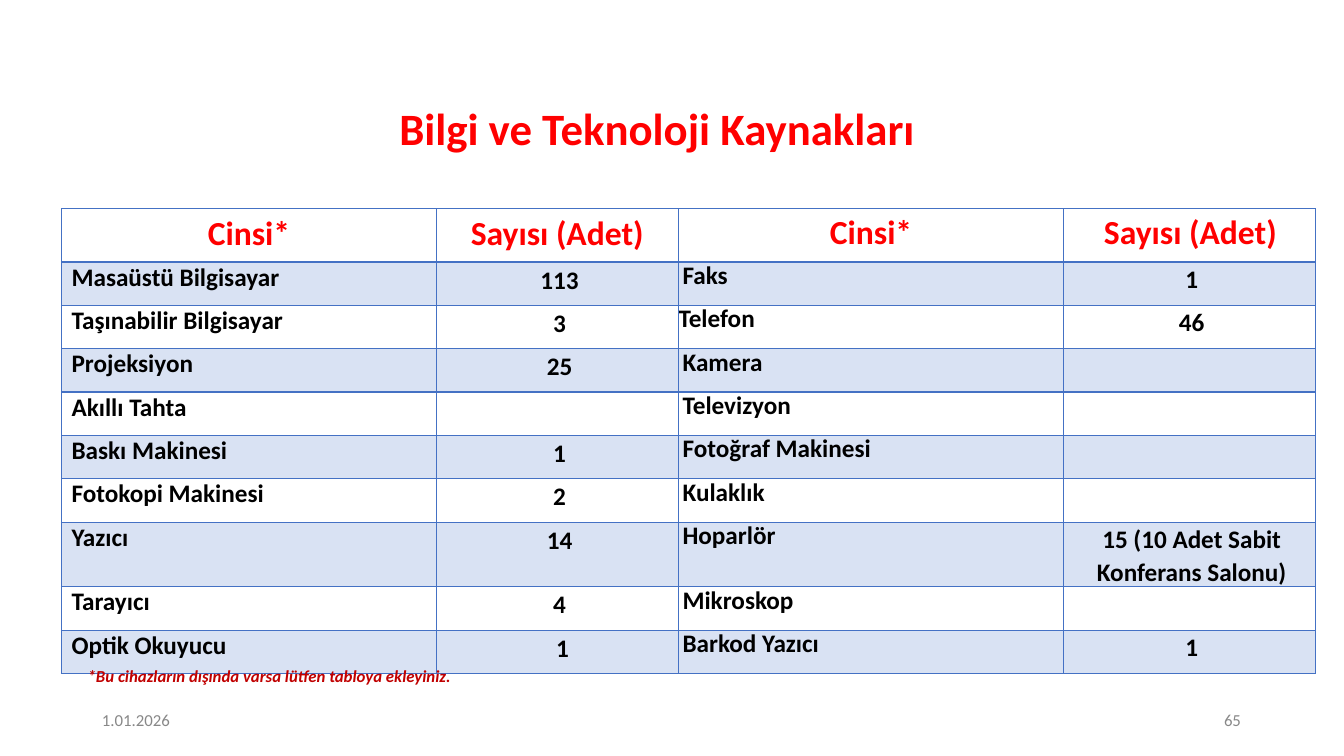
import pptx
import pptx.util
import pptx.dml.color
import pptx.enum.text
import pptx.oxml
from pptx.oxml.ns import qn
from lxml import etree

Inches, Pt = pptx.util.Inches, pptx.util.Pt
RGB = pptx.dml.color.RGBColor
ALIGN = pptx.enum.text.PP_ALIGN

RED = RGB(0xFF, 0, 0)
DARK = RGB(0xC0, 0, 0)
BLACK = RGB(0, 0, 0)
GREY = RGB(0x88, 0x88, 0x88)
BLUE = RGB(0x44, 0x71, 0xC4)

TITLE = "Bilgi ve Teknoloji Kaynakları"
NOTE = "*Bu cihazların dışında varsa lütfen tabloya ekleyiniz."
DATE, PAGE = "1.01.2026", "65"
ROWS = [
    ("Cinsi*", "Sayısı (Adet)", "Cinsi*", "Sayısı (Adet)"),
    ("Masaüstü Bilgisayar", "113", "Faks", "1"),
    ("Taşınabilir Bilgisayar", "3", "Telefon", "46"),
    ("Projeksiyon", "25", "Kamera", ""),
    ("Akıllı Tahta", "", "Televizyon", ""),
    ("Baskı Makinesi", "1", "Fotoğraf Makinesi", ""),
    ("Fotokopi Makinesi", "2", "Kulaklık", ""),
    ("Yazıcı", "14", "Hoparlör", "15 (10 Adet Sabit Konferans Salonu)"),
    ("Tarayıcı", "4", "Mikroskop", ""),
    ("Optik Okuyucu", " 1", "Barkod Yazıcı", "1"),
]
WIDTHS = (3.72, 2.4, 3.82, 2.5)
HEAD, ROW = 0.53, 0.43
CENTER = dict(align=ALIGN.CENTER)
HEADS = (CENTER, dict(indent=0.34), CENTER, dict(indent=0.4))
COUNT = dict(CENTER, indent=0.04, line=1.07, after=8)
BODY = (dict(indent=0.1), COUNT, dict(indent=0.04, line=Pt(20.9)), COUNT)


def write(frame, text, size=18, color=BLACK, bold=True, italic=False,
          align=ALIGN.LEFT, indent=0, line=None, after=0):
    para = frame.paragraphs[0]
    props = para._p.get_or_add_pPr()
    props.set("marL", str(Inches(indent)))
    props.set("indent", "0")
    para.alignment = align
    para.space_before, para.space_after = Pt(0), Pt(after)
    if line:
        para.line_spacing = line
    run = para.add_run()
    run.text = text
    font = run.font
    font.name, font.size, font.color.rgb = "Calibri", Pt(size), color
    font.bold, font.italic = bold, italic


def inset(item, left=0, top=0, right=0, bottom=0):
    item.margin_left, item.margin_top = Inches(left), Inches(top)
    item.margin_right, item.margin_bottom = Inches(right), Inches(bottom)


def label(slide, box, text, top=0, **style):
    frame = slide.shapes.add_textbox(*map(Inches, box)).text_frame
    frame.word_wrap = True
    inset(frame, top=top)
    write(frame, text, **style)


def tint(cell):
    cell.fill.solid()
    cell.fill.fore_color.rgb = BLUE
    shade = cell._tc.tcPr.find(".//" + qn("a:srgbClr"))
    etree.SubElement(shade, qn("a:alpha")).set("val", "20000")


def border(cell, row):
    """Draw all four edges, with a heavier rule under the header."""
    heavy = {0: "B", 1: "T"}.get(row)
    for place, side in enumerate("LRTB"):
        edge = etree.Element(qn("a:ln" + side))
        edge.set("w", str(Pt(2.25 if side == heavy else 1)))
        fill = etree.SubElement(edge, qn("a:solidFill"))
        etree.SubElement(fill, qn("a:srgbClr")).set("val", str(BLUE))
        cell._tc.tcPr.insert(place, edge)


def main():
    deck = pptx.Presentation()
    deck.slide_width, deck.slide_height = Inches(13.33), Inches(7.5)
    slide = deck.slides.add_slide(deck.slide_layouts[5])

    title = slide.shapes.title
    title.left, title.top = Inches(0.36), Inches(0.65)
    title.width, title.height = Inches(11.42), Inches(1.04)
    frame = title.text_frame
    frame.auto_size = pptx.enum.text.MSO_AUTO_SIZE.NONE
    frame.vertical_anchor = pptx.enum.text.MSO_ANCHOR.TOP
    inset(frame, top=0.35)
    write(frame, TITLE, size=32, color=RED, indent=3.6)

    small = dict(size=12, color=GREY, bold=False, line=Pt(12.4))
    label(slide, (1, 7.07, 0.71, 0.2), DATE, indent=0.01, **small)
    label(slide, (12.1, 7.07, 0.27, 0.2), PAGE, indent=0.04, **small)

    high = HEAD + ROW * (len(ROWS) - 1)
    table = slide.shapes.add_table(
        len(ROWS), len(WIDTHS), Inches(0.61), Inches(2.07),
        Inches(sum(WIDTHS)), Inches(high)).table
    table.first_row = table.horz_banding = False
    for col, width in zip(table.columns, WIDTHS):
        col.width = Inches(width)
    for r, texts in enumerate(ROWS):
        table.rows[r].height = Inches(ROW if r else HEAD)
        for c, text in enumerate(texts):
            cell = table.cell(r, c)
            if r == 0:
                inset(cell, top=0.05 if c < 2 else 0.04)
                style = dict(HEADS[c], size=24, color=RED)
            else:
                side, top = (0.06, 0.01) if c == 1 else (0, 0)
                inset(cell, side, top, side)
                style = dict(BODY[c])
                if text == "Telefon":
                    style.update(indent=0, line=Pt(20.4))
            if text:
                write(cell.text_frame, text, **style)
            if r % 2:
                tint(cell)
            else:
                cell.fill.background()
            border(cell, r)

    label(slide, (0.86, 6.59, 3.66, 0.23), NOTE, top=0.01, size=12,
          color=DARK, italic=True, indent=0.01)
    deck.save("out.pptx")


if __name__ == "__main__":
    main()
